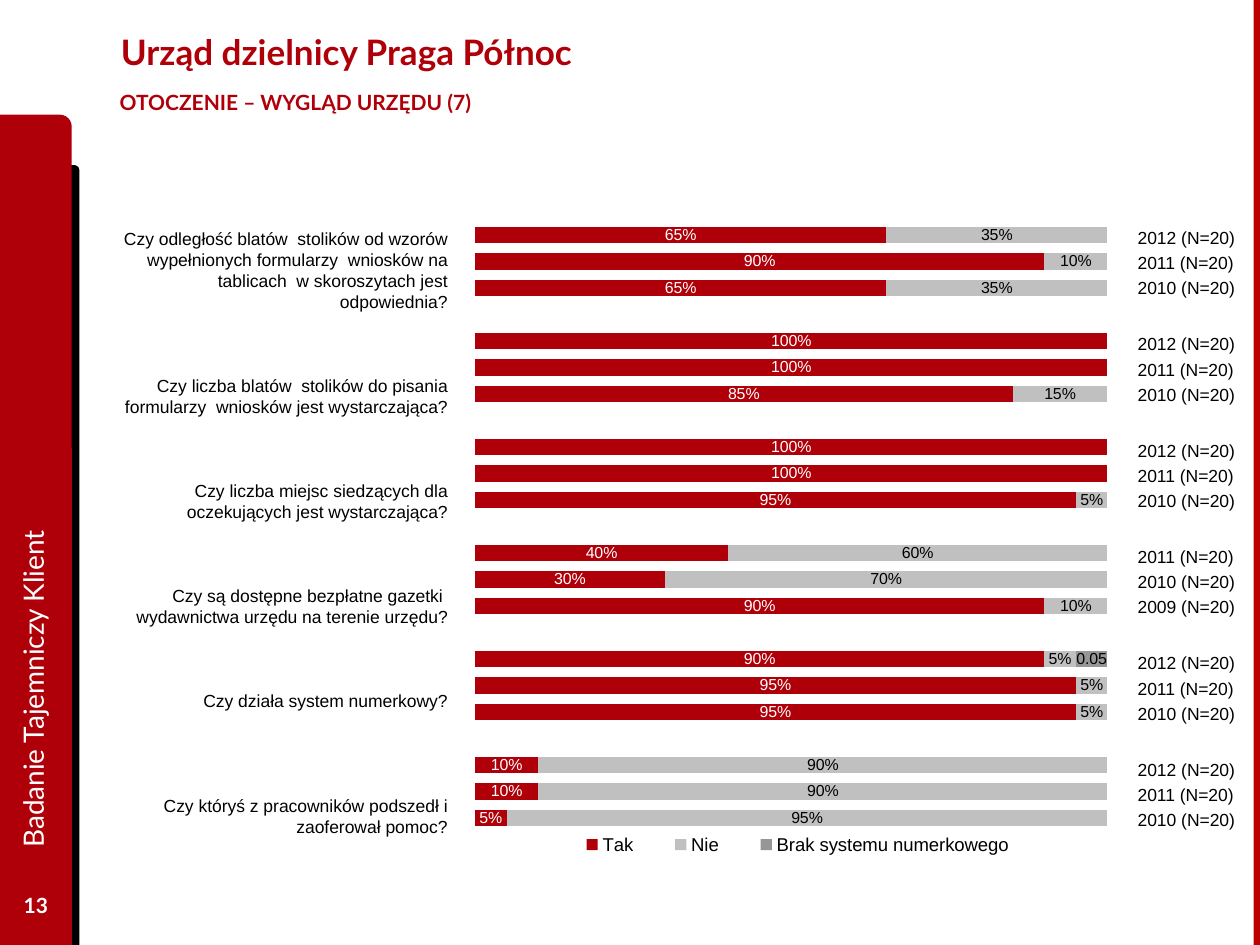
from dataclasses import dataclass

from lxml import etree
from pptx import Presentation
from pptx.chart.data import CategoryChartData
from pptx.dml.color import RGBColor
from pptx.enum.chart import XL_CHART_TYPE, XL_LEGEND_POSITION
from pptx.enum.shapes import MSO_SHAPE
from pptx.enum.text import MSO_ANCHOR, PP_ALIGN
from pptx.oxml.ns import qn
from pptx.util import Inches, Pt


@dataclass(frozen=True)
class Theme:
    """Colours, fonts and type sizes of the slide."""
    red: str = "AF000A"
    strip: str = "BD0000"
    light: str = "C0C0C0"
    grey: str = "969696"
    black: str = "000000"
    white: str = "FFFFFF"
    head: str = "Lato"
    body: str = "Arial"
    title: float = 20
    side: float = 16
    subtitle: float = 12
    text: float = 10
    legend: float = 10.6
    label: float = 9.1


T = Theme()
QUESTIONS = [
    ("Czy odległość blatów  stolików od wzorów wypełnionych formularzy  "
     "wniosków na tablicach  w skoroszytach jest odpowiednia?", 0),
    ("Czy liczba blatów  stolików do pisania formularzy  wniosków jest wystarczająca?", 36),
    ("Czy liczba miejsc siedzących dla oczekujących jest wystarczająca?", 36),
    ("Czy są dostępne bezpłatne gazetki  wydawnictwa urzędu na terenie urzędu?", 36),
    ("Czy działa system numerkowy?", 36),
    ("Czy któryś z pracowników podszedł i zaoferował pomoc?", 48),
]
LAST_YEARS = [2012, 2012, 2012, 2011, 2012, 2012]
GROUPS = {
    "Tak": [(0.65, 0.9, 0.65), (1, 1, 0.85), (1, 1, 0.95),
            (0.4, 0.3, 0.9), (0.9, 0.95, 0.95), (0.1, 0.1, 0.05)],
    "Nie": [(0.35, 0.1, 0.35), (None, None, 0.15), (None, None, 0.05),
            (0.6, 0.7, 0.1), (0.05, 0.05, 0.05), (0.9, 0.9, 0.95)],
    "Brak systemu numerkowego": [(None,) * 3] * 4 + [(0.05, None, None), (None,) * 3],
}
STYLES = [(T.red, T.white, "0%"), (T.light, T.black, "0%"), (T.grey, T.black, "General")]


def style_font(font, size, color, name=T.body, bold=False):
    """Set face, size, weight and colour of a font."""
    font.name, font.size, font.bold = name, Pt(size), bold
    font.color.rgb = RGBColor.from_string(color)


def fill_text(sp, lines, size, color, name=T.body, bold=False, align=PP_ALIGN.LEFT,
              anchor=MSO_ANCHOR.TOP, wrap=True):
    """Put lines of text in a shape, one paragraph each, and return the paragraphs."""
    tf = sp.text_frame
    tf.text = "\n".join(lines)
    tf.word_wrap, tf.vertical_anchor = wrap, anchor
    for p in tf.paragraphs:
        p.alignment = align
        for r in p.runs:
            style_font(r.font, size, color, name, bold)
    return tf.paragraphs


def add_text(s, box, lines, size, color, **kw):
    """Add a text box and return it."""
    sp = s.shapes.add_textbox(*map(Inches, box))
    fill_text(sp, lines, size, color, **kw)
    return sp


def add_block(s, shape, box, color):
    """Add a plain filled shape."""
    sp = s.shapes.add_shape(shape, *map(Inches, box))
    sp.shadow.inherit = False
    sp.fill.solid()
    sp.fill.fore_color.rgb = RGBColor.from_string(color)
    sp.line.fill.background()


def make_layout(x, y, w, h, inner=False):
    """Return a manual chart layout in fractions of the chart."""
    layout = etree.Element(qn("c:layout"))
    manual = etree.SubElement(layout, qn("c:manualLayout"))
    target = [("layoutTarget", "inner")] if inner else []
    for tag, val in target + [("xMode", "edge"), ("yMode", "edge"),
                              ("x", x), ("y", y), ("w", w), ("h", h)]:
        etree.SubElement(manual, qn(f"c:{tag}")).set("val", str(val))
    return layout


def drop_layout(parent):
    """Remove any layout already present in a chart part."""
    for old in parent.findall(qn("c:layout")):
        parent.remove(old)


def join_groups(groups):
    """Chain groups of values with one empty slot between them."""
    vals = []
    for group in groups:
        vals += [*group, None]
    return vals[:-1]


def add_bars(s):
    """Add the stacked bar chart with its legend."""
    data = CategoryChartData(number_format="General")
    columns = {name: join_groups(groups) for name, groups in GROUPS.items()}
    data.categories = [str(i + 1) for i in range(len(columns["Tak"]))]
    for name, vals in columns.items():
        data.add_series(name, vals)
    chart = s.shapes.add_chart(XL_CHART_TYPE.BAR_STACKED, Inches(3.77), Inches(1.57),
                               Inches(5.02), Inches(5.32), data).chart
    style_font(chart.font, T.label, T.black)
    chart.has_title = False

    cat, val = chart.category_axis, chart.value_axis
    cat.reverse_order = True
    val.minimum_scale, val.maximum_scale, val.major_unit = 0, 1, 0.2
    val.has_major_gridlines = False
    cat.visible = val.visible = False

    plot = chart.plots[0]
    plot.gap_width, plot.overlap, plot.vary_by_categories = 60, 100, False
    for series, (fill, ink, fmt) in zip(plot.series, STYLES):
        series.format.fill.solid()
        series.format.fill.fore_color.rgb = RGBColor.from_string(fill)
        labels = series.data_labels
        labels.show_value = True
        labels.number_format, labels.number_format_is_linked = fmt, False
        style_font(labels.font, T.label, ink)

    area = cat._element.getparent()
    drop_layout(area)
    area.insert(0, make_layout(0, 0.036, 1, 0.909, inner=True))

    chart.has_legend = True
    legend = chart.legend
    legend.position = XL_LEGEND_POSITION.BOTTOM
    legend.include_in_layout = False
    style_font(legend.font, T.legend, T.black)
    drop_layout(legend._element)
    legend._element.find(qn("c:legendPos")).addnext(make_layout(0.12, 0.94, 0.78, 0.05))


def add_frame(s):
    """Add the side tab, its caption, the page number and the right strip."""
    add_block(s, MSO_SHAPE.ROUND_1_RECTANGLE, (0.39, 1.31, 0.24, 6.19), T.black)
    add_block(s, MSO_SHAPE.ROUND_1_RECTANGLE, (0, 0.91, 0.57, 6.59), T.red)
    add_block(s, MSO_SHAPE.RECTANGLE, (9.95, 0, 0.05, 7.5), T.strip)
    caption = add_text(s, (-2.62, 3.69, 5.76, 0.51), ["Badanie Tajemniczy Klient"], T.side,
                       T.white, name=T.head, anchor=MSO_ANCHOR.MIDDLE)
    caption.rotation = 270
    add_text(s, (0, 6.98, 0.57, 0.4), ["13"], T.subtitle, T.white, name=T.head, bold=True,
             align=PP_ALIGN.CENTER, anchor=MSO_ANCHOR.MIDDLE)


def add_headings(s):
    """Fill the title placeholder and add the subtitle."""
    sp = s.shapes.title
    sp.left, sp.top, sp.width, sp.height = map(Inches, (0.86, 0.05, 7.77, 0.72))
    fill_text(sp, ["Urząd dzielnicy Praga Północ"], T.title, T.red, name=T.head, bold=True,
              anchor=MSO_ANCHOR.MIDDLE)
    sub = add_text(s, (0.75, 0.66, 3.85, 0.33), ["OTOCZENIE – WYGLĄD URZĘDU (7)"],
                   T.subtitle, T.red, name=T.head, bold=True, wrap=False)
    sub.text_frame.margin_left = sub.text_frame.margin_right = Inches(0.2)


def add_questions(s):
    """Add the question column and the years beside each group of bars."""
    sp = add_text(s, (0.75, 1.76, 2.9, 4.98), [q for q, _ in QUESTIONS], T.text, T.black,
                  align=PP_ALIGN.RIGHT)
    for p, (_, gap) in zip(sp.text_frame.paragraphs, QUESTIONS):
        p.space_before = Pt(gap)
    for i, last in enumerate(LAST_YEARS):
        lines = [f"{last - k} (N=20)" for k in range(3)]
        sp = add_text(s, (8.93, 1.72 + i * 0.844, 1.05, 0.7), lines, T.text, T.black, wrap=False)
        for p in sp.text_frame.paragraphs:
            p.line_spacing = 1.2


def main():
    """Build the slide and save it."""
    prs = Presentation()
    prs.slide_width, prs.slide_height = Inches(10), Inches(7.5)
    s = prs.slides.add_slide(prs.slide_layouts[5])
    add_frame(s)
    add_headings(s)
    add_bars(s)
    add_questions(s)
    prs.save("out.pptx")


if __name__ == "__main__":
    main()
